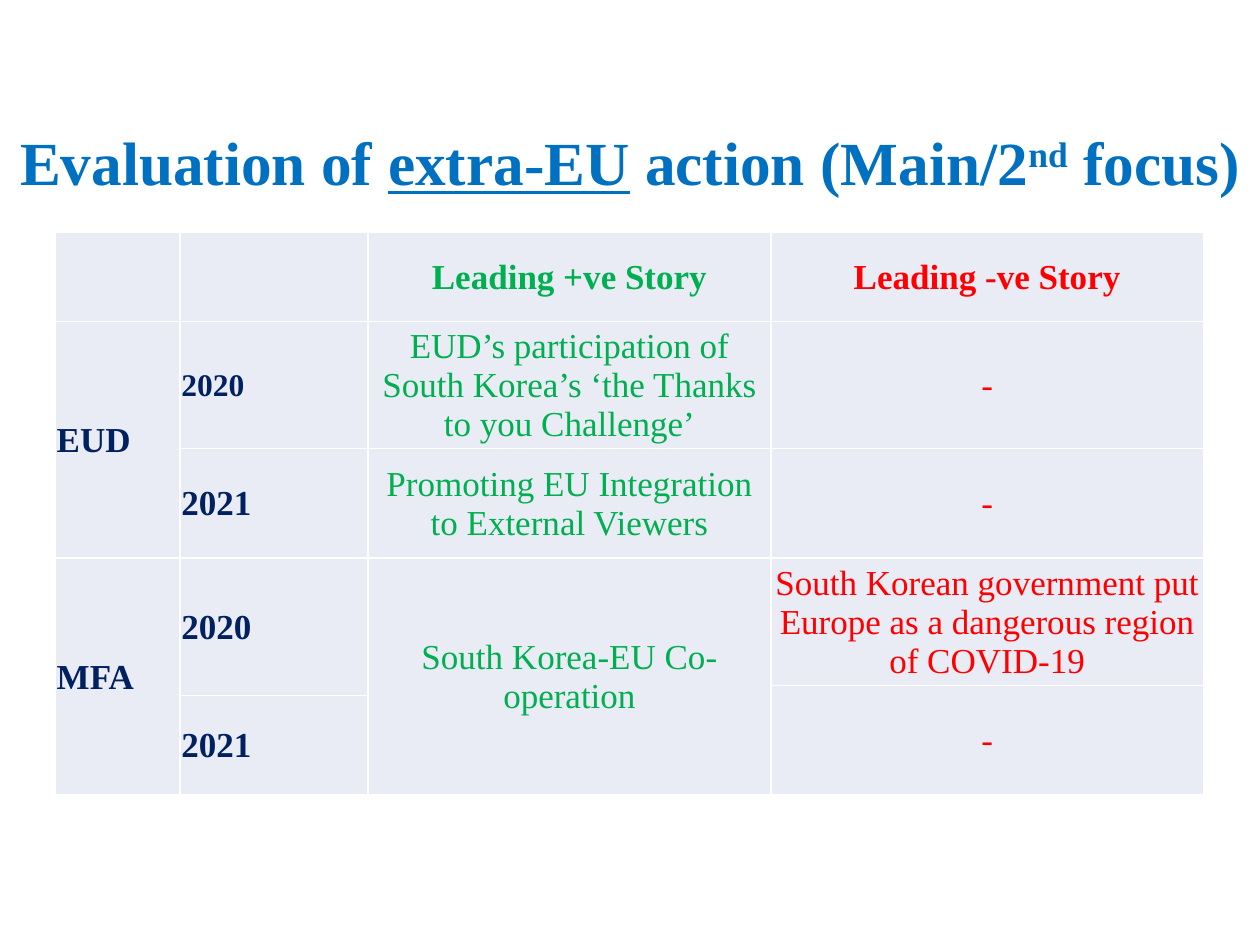
from lxml import etree
from pptx import Presentation
from pptx.dml.color import RGBColor
from pptx.enum.text import MSO_ANCHOR, PP_ALIGN
from pptx.oxml.ns import qn
from pptx.util import Inches, Pt

MIDDLE = MSO_ANCHOR.MIDDLE
CENTER, LEFT = PP_ALIGN.CENTER, PP_ALIGN.LEFT
FONT = "Times New Roman"
COLORS = {"title": "0070C0", "label": "002060", "good": "00B050",
          "bad": "FF0000", "cell": "E9EBF5", "border": "FFFFFF"}


def format_run(r, size, color, bold):
    r.font.name = FONT
    r.font.size = Pt(size)
    r.font.bold = bold
    r.font.color.rgb = RGBColor.from_string(COLORS[color])


def add_borders(cell):
    tcPr = cell._tc.get_or_add_tcPr()
    for side in ("lnL", "lnR", "lnT", "lnB"):
        ln = etree.SubElement(tcPr, qn(f"a:{side}"), w=str(Pt(1)))
        fill = etree.SubElement(ln, qn("a:solidFill"))
        etree.SubElement(fill, qn("a:srgbClr"), val=COLORS["border"])


prs = Presentation()
prs.slide_width, prs.slide_height = Inches(10), Inches(7.5)
s = prs.slides.add_slide(prs.slide_layouts[6])

title = s.shapes.add_textbox(Inches(0), Inches(0.78), Inches(10), Inches(1.07))
tf = title.text_frame
tf.word_wrap = True
tf.vertical_anchor = MIDDLE
p = tf.paragraphs[0]
p.alignment = CENTER
p.line_spacing = 0.9
for text in ("Evaluation of ", "extra-EU", " action (Main/2", "nd", " focus)"):
    r = p.add_run()
    r.text = text
    format_run(r, 35, "title", True)
    if text == "extra-EU":
        r.font.underline = True
    if text == "nd":
        r._r.get_or_add_rPr().set("baseline", "30000")

col_widths = [0.99, 1.49, 3.2, 3.43]
row_heights = [0.71, 0.87, 0.87, 0.83, 0.08, 0.79]
rows = [
    ["", "", "Leading +ve Story", "Leading -ve Story"],
    ["EUD", "2020", "EUD’s participation of South Korea’s ‘the Thanks to you Challenge’", "-"],
    ["", "2021", "Promoting EU Integration to External Viewers", "-"],
    ["MFA", "2020", "South Korea-EU Co-operation",
     "South Korean government put Europe as a dangerous region of COVID-19"],
    ["", "", "", "-"],
    ["", "2021", "", ""],
]
merges = [(1, 2, 0), (3, 5, 0), (3, 4, 1), (3, 5, 2), (4, 5, 3)]
col_colors = ["label", "label", "good", "bad"]

frame = s.shapes.add_table(len(rows), len(col_widths), Inches(0.44), Inches(1.84),
                           Inches(sum(col_widths)), Inches(sum(row_heights)))
table = frame.table
for col, width in zip(table.columns, col_widths):
    col.width = Inches(width)
for row, height in zip(table.rows, row_heights):
    row.height = Inches(height)

for i, texts in enumerate(rows):
    for j, text in enumerate(texts):
        cell = table.cell(i, j)
        cell.margin_left = cell.margin_right = cell.margin_top = Inches(0.01)
        cell.margin_bottom = Inches(0)
        cell.vertical_anchor = MIDDLE
        add_borders(cell)
        cell.fill.solid()
        cell.fill.fore_color.rgb = RGBColor.from_string(COLORS["cell"])
        if text:
            cell.text_frame.text = text
            p = cell.text_frame.paragraphs[0]
            p.alignment = LEFT if j < 2 else CENTER
            size = 18 if (i, j) == (1, 1) else 20
            format_run(p.runs[0], size, col_colors[j], i == 0 or j < 2)

for top, bottom, j in merges:
    table.cell(top, j).merge(table.cell(bottom, j))

prs.save("out.pptx")
